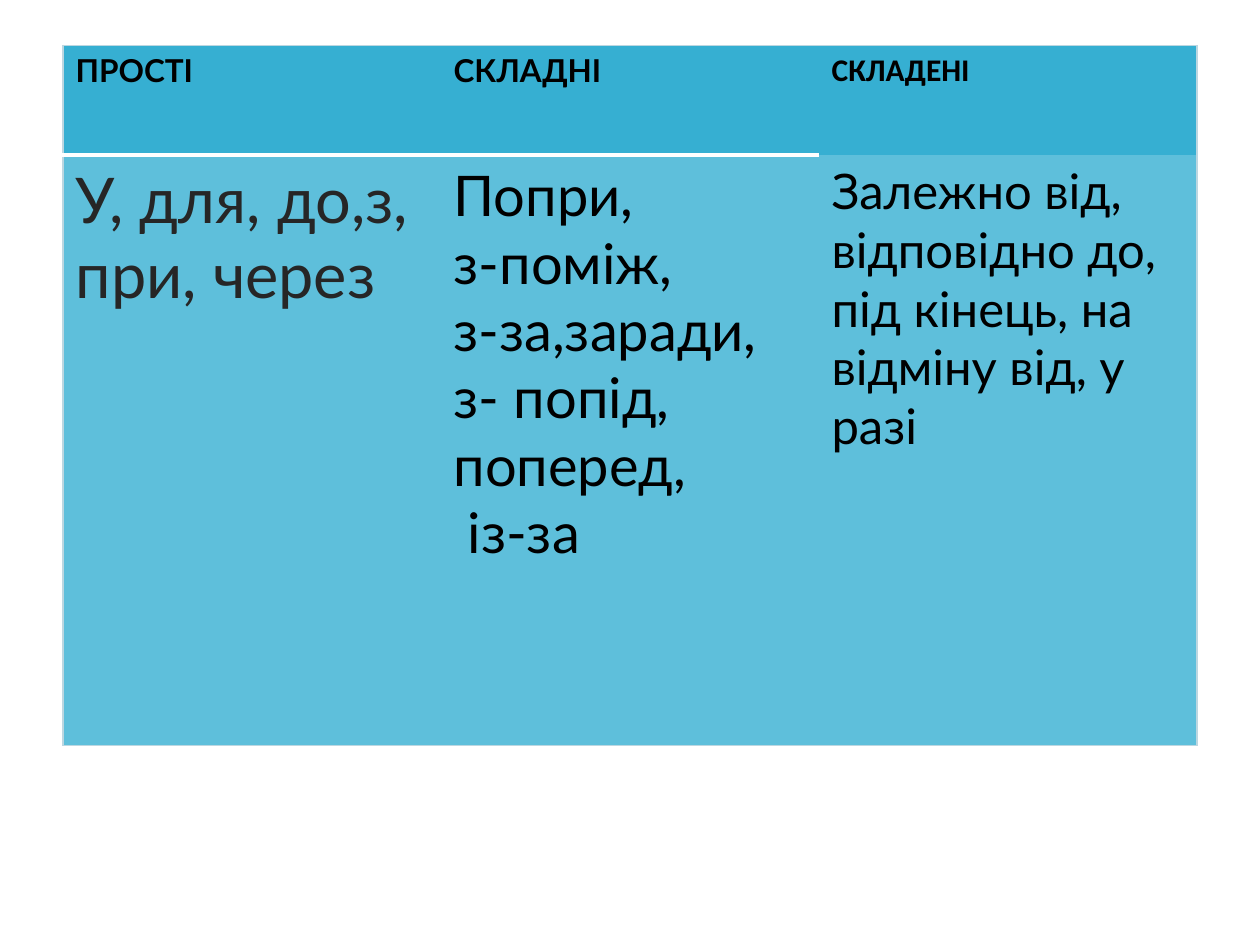
from dataclasses import dataclass

from lxml import etree
from pptx import Presentation
from pptx.dml.color import RGBColor
from pptx.oxml import ns
from pptx.util import Pt

HEADER_FILL, BODY_FILL = "36AFD2", "5EBFDB"
COLUMN_WIDTH = 216
ROW_HEIGHTS = (62.6, 337.4)


@dataclass(frozen=True)
class Border:
    color: str
    width: float


@dataclass(frozen=True)
class CellText:
    paragraphs: tuple[str, ...]
    size: float
    font: str = "Lato"
    color: str = "000000"
    bold: bool = False


OUTLINE = Border("BCD7E1", 0.75)
DIVIDER = Border("FFFFFF", 3)

ROWS = (
    (
        CellText(("ПРОСТІ",), 18, bold=True),
        CellText(("СКЛАДНІ",), 18, bold=True),
        CellText(("СКЛАДЕНІ",), 18, font="Calibri", bold=True),
    ),
    (
        CellText(("У, для, до,з, при, через",), 36, color="262626"),
        CellText(("Попри,", "з-поміж,", "з-за,заради, з- попід, поперед,", " із-за"), 32),
        CellText(("Залежно від,", "відповідно до, під кінець, на відміну від, у разі"), 28),
    ),
)


def rgb(color: str) -> RGBColor:
    return RGBColor.from_string(color)


def set_borders(cell, borders: dict[str, Border | None]) -> None:
    """Draw the given sides (L, R, T, B); a side set to None has no line."""
    properties = cell._tc.get_or_add_tcPr()
    for side, border in borders.items():
        line = etree.SubElement(properties, ns.qn(f"a:ln{side}"))
        if border is None:
            line.set("w", "0")
            etree.SubElement(line, ns.qn("a:noFill"))
        else:
            line.set("w", str(int(Pt(border.width))))
            fill = etree.SubElement(line, ns.qn("a:solidFill"))
            etree.SubElement(fill, ns.qn("a:srgbClr"), val=border.color)


def write_text(cell, content: CellText) -> None:
    frame = cell.text_frame
    for index, words in enumerate(content.paragraphs):
        paragraph = frame.add_paragraph() if index else frame.paragraphs[0]
        run = paragraph.add_run()
        run.text = words
        run.font.name = content.font
        run.font.size = Pt(content.size)
        run.font.bold = content.bold
        run.font.color.rgb = rgb(content.color)


def add_preposition_table(slide) -> None:
    columns = len(ROWS[0])
    table = slide.shapes.add_table(
        len(ROWS), columns, Pt(36), Pt(25.9),
        Pt(COLUMN_WIDTH * columns), Pt(sum(ROW_HEIGHTS)),
    ).table
    table.first_row = table.horz_banding = False
    for column in table.columns:
        column.width = Pt(COLUMN_WIDTH)
    for row, height in zip(table.rows, ROW_HEIGHTS):
        row.height = Pt(height)

    for row_index, contents in enumerate(ROWS):
        header = row_index == 0
        for column_index, content in enumerate(contents):
            cell = table.cell(row_index, column_index)
            last = column_index == columns - 1
            divider = None if last else DIVIDER
            set_borders(cell, {
                "L": OUTLINE if column_index == 0 else None,
                "R": OUTLINE if last else None,
                "T": OUTLINE if header else divider,
                "B": divider if header else OUTLINE,
            })
            cell.fill.solid()
            cell.fill.fore_color.rgb = rgb(HEADER_FILL if header else BODY_FILL)
            write_text(cell, content)


def main() -> None:
    presentation = Presentation()
    presentation.slide_width, presentation.slide_height = Pt(720), Pt(540)
    slide = presentation.slides.add_slide(presentation.slide_layouts[6])
    add_preposition_table(slide)
    presentation.save("out.pptx")


if __name__ == "__main__":
    main()
